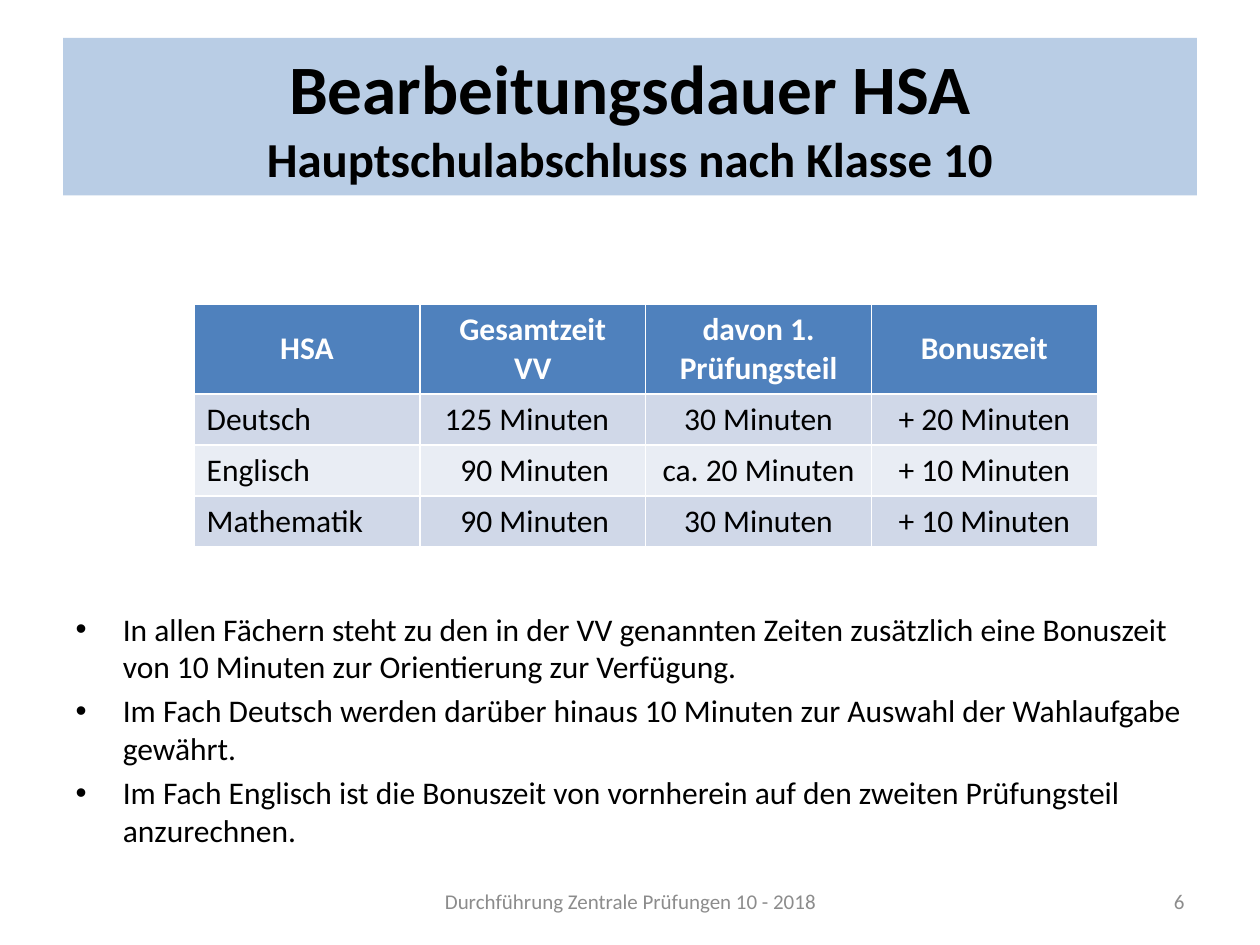
import pptx
import pptx.util
import pptx.dml.color
import pptx.enum.text

WIDE, HIGH = pptx.util.Inches(10), pptx.util.Inches(7.5)
HUES = {"band": "B9CDE5", "head": "4F81BD", "odd": "D0D8E8",
        "even": "E9EDF4", "ink": "000000", "white": "FFFFFF", "gray": "8C8C8C"}
SIDE = pptx.enum.text.PP_ALIGN
MID = pptx.enum.text.MSO_ANCHOR.MIDDLE
TOP = pptx.enum.text.MSO_ANCHOR.TOP

ROWS = [
    ["HSA", "Gesamtzeit\nVV", "davon 1. Prüfungsteil", "Bonuszeit"],
    ["Deutsch", "125 Minuten", "30 Minuten", "+ 20 Minuten"],
    ["Englisch", "90 Minuten", "ca. 20 Minuten", "+ 10 Minuten"],
    ["Mathematik", "90 Minuten", "30 Minuten", "+ 10 Minuten"],
]
NOTES = [
    "In allen Fächern steht zu den in der VV genannten Zeiten zusätzlich eine "
    "Bonuszeit von 10 Minuten zur Orientierung zur Verfügung.",
    "Im Fach Deutsch werden darüber hinaus 10 Minuten zur Auswahl der "
    "Wahlaufgabe gewährt.",
    "Im Fach Englisch ist die Bonuszeit von vornherein auf den zweiten "
    "Prüfungsteil anzurechnen.",
]


def apply(item, form):
    for name, value in form.items():
        setattr(item, name, value)


def area(left, top, width, height):
    return {"left": int(left * WIDE), "top": int(top * HIGH),
            "width": int(width * WIDE), "height": int(height * HIGH)}


def paint(item, hue):
    item.fill.solid()
    item.fill.fore_color.rgb = pptx.dml.color.RGBColor.from_string(HUES[hue])


def style(font, size, hue="ink", bold=False):
    apply(font, {"name": "Calibri", "size": pptx.util.Pt(size), "bold": bold})
    font.color.rgb = pptx.dml.color.RGBColor.from_string(HUES[hue])


def write(frame, text, size, hue="ink", bold=False, side=None):
    frame.text = text
    for para in frame.paragraphs:
        para.alignment = side
        for run in para.runs:
            style(run.font, size, hue, bold)


def add_title(slide, lines):
    title = slide.shapes.title
    apply(title, area(0.05, 0.04, 0.9, 1 / 6))
    paint(title, "band")
    frame = title.text_frame
    apply(frame, {"auto_size": pptx.enum.text.MSO_AUTO_SIZE.NONE,
                  "vertical_anchor": MID})
    write(frame, "\v".join(lines), 39.6, bold=True, side=SIDE.CENTER)
    frame.paragraphs[0].runs[1].font.size = pptx.util.Pt(27.9)


def add_list(slide, notes):
    body = slide.placeholders[1]
    apply(body, area(0.05, 0.233, 0.9, 0.66))
    frame = body.text_frame
    apply(frame, {"auto_size": pptx.enum.text.MSO_AUTO_SIZE.NONE,
                  "vertical_anchor": TOP, "margin_bottom": 0,
                  "margin_top": int(0.412 * HIGH)})
    write(frame, "\n".join(notes), 18)


def add_grid(slide, rows):
    box = area(0.154, 0.322, 0.717, 0.255)
    grid = slide.shapes.add_table(len(rows), len(rows[0]), **box).table
    for line in grid.rows:
        line.height = int(0.054 * HIGH)
    grid.rows[0].height = int(0.093 * HIGH)
    for r, row in enumerate(rows):
        for c, text in enumerate(row):
            cell = grid.cell(r, c)
            paint(cell, "head" if r == 0 else "odd" if r % 2 else "even")
            side = SIDE.CENTER
            if r and c == 0:
                side = SIDE.LEFT
            elif r and c == 1:
                side = SIDE.RIGHT
                cell.margin_right = int(0.029 * WIDE)
            cell.vertical_anchor = TOP if r else MID
            write(cell.text_frame, text, 18, "ink" if r else "white",
                  r == 0, side)


def add_foot(slide, text, left, width, side):
    box = slide.shapes.add_textbox(**area(left, 0.927, width, 0.053))
    apply(box.text_frame, {"word_wrap": True, "vertical_anchor": MID})
    write(box.text_frame, text, 12, "gray", side=side)


def main():
    deck = pptx.Presentation()
    apply(deck, {"slide_width": WIDE, "slide_height": HIGH})
    slide = deck.slides.add_slide(deck.slide_layouts[1])
    add_title(slide, ["Bearbeitungsdauer HSA",
                      "Hauptschulabschluss nach Klasse 10"])
    add_list(slide, NOTES)
    add_grid(slide, ROWS)
    add_foot(slide, "Durchführung Zentrale Prüfungen 10 - 2018",
             0.342, 0.317, SIDE.CENTER)
    add_foot(slide, "6", 0.717, 0.233, SIDE.RIGHT)
    deck.save("out.pptx")


if __name__ == "__main__":
    main()
